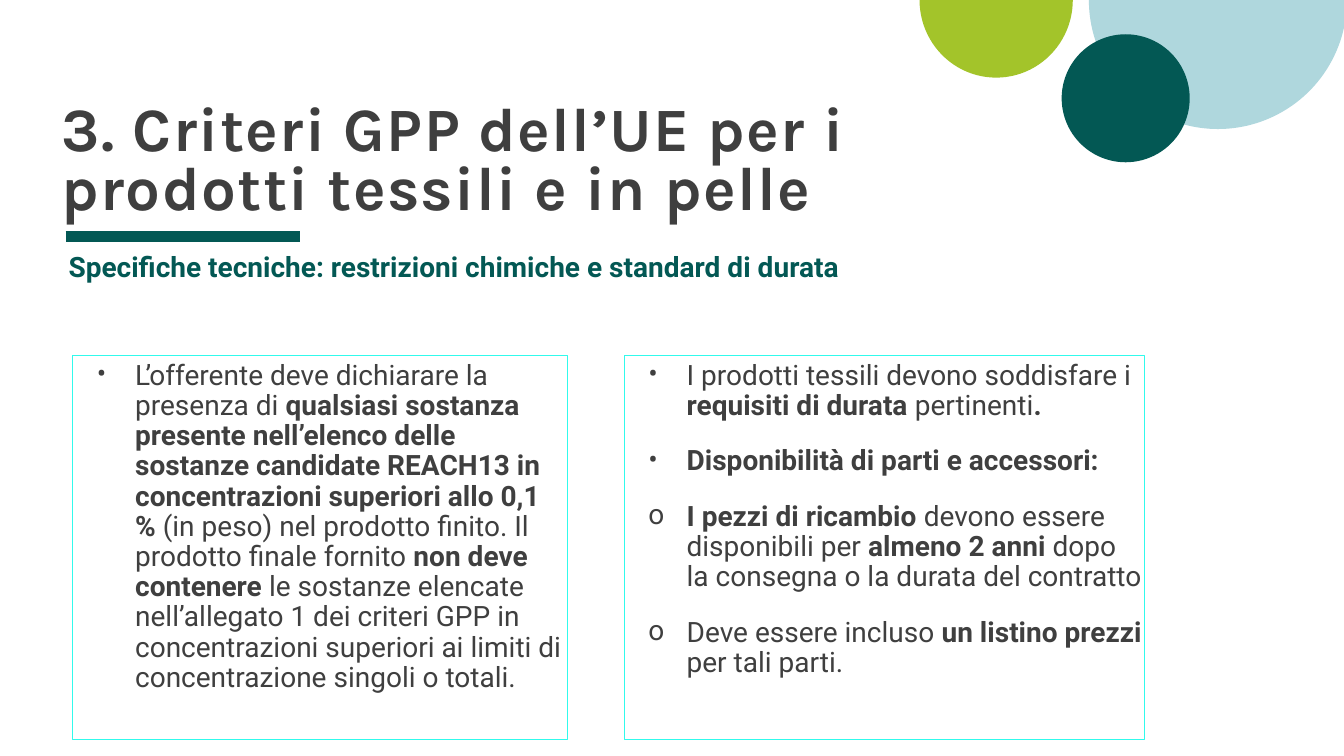
from dataclasses import dataclass

from lxml.etree import SubElement
from pptx import Presentation
from pptx.dml.color import RGBColor
from pptx.enum.shapes import MSO_CONNECTOR, MSO_SHAPE
from pptx.enum.text import MSO_ANCHOR, MSO_AUTO_SIZE, PP_ALIGN
from pptx.oxml.ns import qn
from pptx.util import Inches, Pt

CELL = 0.1  # one grid column or row, in inches


@dataclass(frozen=True)
class Theme:
    ink: str = "3F3F3F"
    green: str = "035854"
    lime: str = "A3C42A"
    sky: str = "AFD7DD"
    frame: str = "31FAEC"
    heading_font: str = "Karla"
    text_font: str = "Roboto"
    heading_size: int = 44
    text_size: int = 20
    paragraph_gap: int = 18
    frame_width: float = 0.75
    rule_width: int = 8


@dataclass(frozen=True)
class Area:
    column: float
    row: float
    columns: float
    rows: float

    def box(self) -> tuple:
        return tuple(grid(n) for n in (self.column, self.row, self.columns, self.rows))


@dataclass(frozen=True)
class Bubble:
    area: Area
    color: str
    half: bool = False


@dataclass(frozen=True)
class Run:
    text: str
    bold: bool = False


@dataclass(frozen=True)
class Item:
    runs: tuple
    bullet: str = ""
    margin: float = 6.2
    hanging: float = 3.8


@dataclass(frozen=True)
class Panel:
    holder: int
    area: Area
    items: tuple
    color: str
    framed: bool = True


def grid(cells: float) -> int:
    return Inches(cells * CELL)


def rgb(color: str) -> RGBColor:
    return RGBColor.from_string(color)


def add_run(paragraph, run: Run, font: str, size: int, color: str):
    piece = paragraph.add_run()
    piece.text = run.text
    piece.font.name, piece.font.size, piece.font.bold = font, Pt(size), run.bold
    piece.font.color.rgb = rgb(color)
    return piece


def place(holder, area: Area, anchor, top: float):
    holder.left, holder.top, holder.width, holder.height = area.box()
    frame = holder.text_frame
    frame.word_wrap = True
    frame.auto_size = MSO_AUTO_SIZE.NONE
    frame.vertical_anchor = anchor
    frame.margin_left = frame.margin_right = frame.margin_bottom = 0
    frame.margin_top = grid(top)
    return frame


def set_bullet(paragraph, item: Item) -> None:
    props = paragraph._p.get_or_add_pPr()
    props.set("marL", str(grid(item.margin)))
    props.set("indent", str(-grid(item.hanging)))
    if not item.bullet:
        SubElement(props, qn("a:buNone"))
        return
    SubElement(SubElement(props, qn("a:buClr")), qn("a:srgbClr")).set("val", THEME.ink)
    SubElement(props, qn("a:buFont")).set("typeface", THEME.text_font)
    SubElement(props, qn("a:buChar")).set("char", item.bullet)


def draw_bubble(slide, bubble: Bubble) -> None:
    kind = MSO_SHAPE.PIE if bubble.half else MSO_SHAPE.OVAL
    disc = slide.shapes.add_shape(kind, *bubble.area.box())
    if bubble.half:
        disc.adjustments[0], disc.adjustments[1] = 0, 108  # lower half: 0 to 180 degrees
    disc.shadow.inherit = False
    disc.fill.solid()
    disc.fill.fore_color.rgb = rgb(bubble.color)
    disc.line.fill.background()


def draw_rule(slide, start: float, end: float, row: float) -> None:
    rule = slide.shapes.add_connector(
        MSO_CONNECTOR.STRAIGHT, grid(start), grid(row), grid(end), grid(row))
    rule.line.color.rgb = rgb(THEME.green)
    rule.line.width = Pt(THEME.rule_width)
    SubElement(rule._element.spPr, qn("a:effectLst"))


def fill_heading(slide, text: str, area: Area) -> None:
    frame = place(slide.shapes.title, area, MSO_ANCHOR.BOTTOM, 0)
    paragraph = frame.paragraphs[0]
    paragraph.alignment = PP_ALIGN.LEFT
    paragraph.line_spacing = 0.8
    heading = add_run(paragraph, Run(text, True), THEME.heading_font,
                      THEME.heading_size, THEME.ink)
    heading.font._element.set("spc", "100")


def fill_panel(slide, panel: Panel) -> None:
    holder = slide.placeholders[panel.holder]
    frame = place(holder, panel.area, MSO_ANCHOR.TOP, 0.5)
    if panel.framed:
        holder.line.color.rgb = rgb(THEME.frame)
        holder.line.width = Pt(THEME.frame_width)
    for index, item in enumerate(panel.items):
        paragraph = frame.add_paragraph() if index else frame.paragraphs[0]
        set_bullet(paragraph, item)
        paragraph.alignment = PP_ALIGN.LEFT
        paragraph.line_spacing = 0.9
        paragraph.space_before = Pt(THEME.paragraph_gap if index else 0)
        for run in item.runs:
            add_run(paragraph, run, THEME.text_font, THEME.text_size, panel.color)


THEME = Theme()

BUBBLES = (
    Bubble(Area(108, -12.8, 25.6, 25.6), THEME.sky, half=True),
    Bubble(Area(91.2, -7.7, 15.2, 15.4), THEME.lime, half=True),
    Bubble(Area(105.3, 3.4, 12.7, 12.7), THEME.green),
)

SUBTITLE = Item((Run("Specifiche tecniche: restrizioni chimiche e standard di durata", True),),
                margin=5, hanging=2.5)

CHEMICALS = (
    Item((
        Run("L’offerente deve dichiarare la presenza di "),
        Run("qualsiasi sostanza presente nell’elenco delle sostanze candidate REACH13 "
            "in concentrazioni superiori allo 0,1 % ", True),
        Run("(in peso) nel prodotto finito. Il prodotto finale fornito "),
        Run("non deve contenere ", True),
        Run("le sostanze elencate nell’allegato 1 dei criteri GPP in concentrazioni "
            "superiori ai limiti di concentrazione singoli o totali."),
    ), "•"),
)

DURABILITY = (
    Item((Run("I prodotti tessili devono soddisfare i "), Run("requisiti di durata ", True),
          Run("pertinenti"), Run(".", True)), "•"),
    Item((Run("Disponibilità di parti e accessori:", True),), "•"),
    Item((Run("I pezzi di ricambio ", True), Run("devono essere disponibili per "),
          Run("almeno 2 anni ", True),
          Run("dopo la consegna o la durata del contratto")), "o"),
    Item((Run("Deve essere incluso "), Run("un listino prezzi ", True),
          Run("per tali parti.")), "o"),
)

PANELS = (
    Panel(1, Area(4.3, 24.6, 97.2, 8.2), (SUBTITLE,), THEME.green, framed=False),
    Panel(2, Area(7.2, 35.3, 49.1, 38.1), CHEMICALS, THEME.ink),
    Panel(4, Area(61.9, 35.3, 51.6, 38.1), DURABILITY, THEME.ink),
)


def main() -> None:
    deck = Presentation()
    deck.slide_width, deck.slide_height = Inches(13.33), Inches(7.5)
    slide = deck.slides.add_slide(deck.slide_layouts.get_by_name("Comparison"))

    # Decoration
    draw_rule(slide, 6.5, 29.8, 23.5)
    for bubble in BUBBLES:
        draw_bubble(slide, bubble)

    # Heading, subtitle and the two framed lists
    fill_heading(slide, "3. Criteri GPP dell’UE per i prodotti tessili e in pelle",
                 Area(6.1, 5.8, 97.2, 16.3))
    for panel in PANELS:
        fill_panel(slide, panel)

    # The layout's second caption is not needed
    spare = slide.placeholders[3]._element
    spare.getparent().remove(spare)
    deck.save("out.pptx")


if __name__ == "__main__":
    main()
